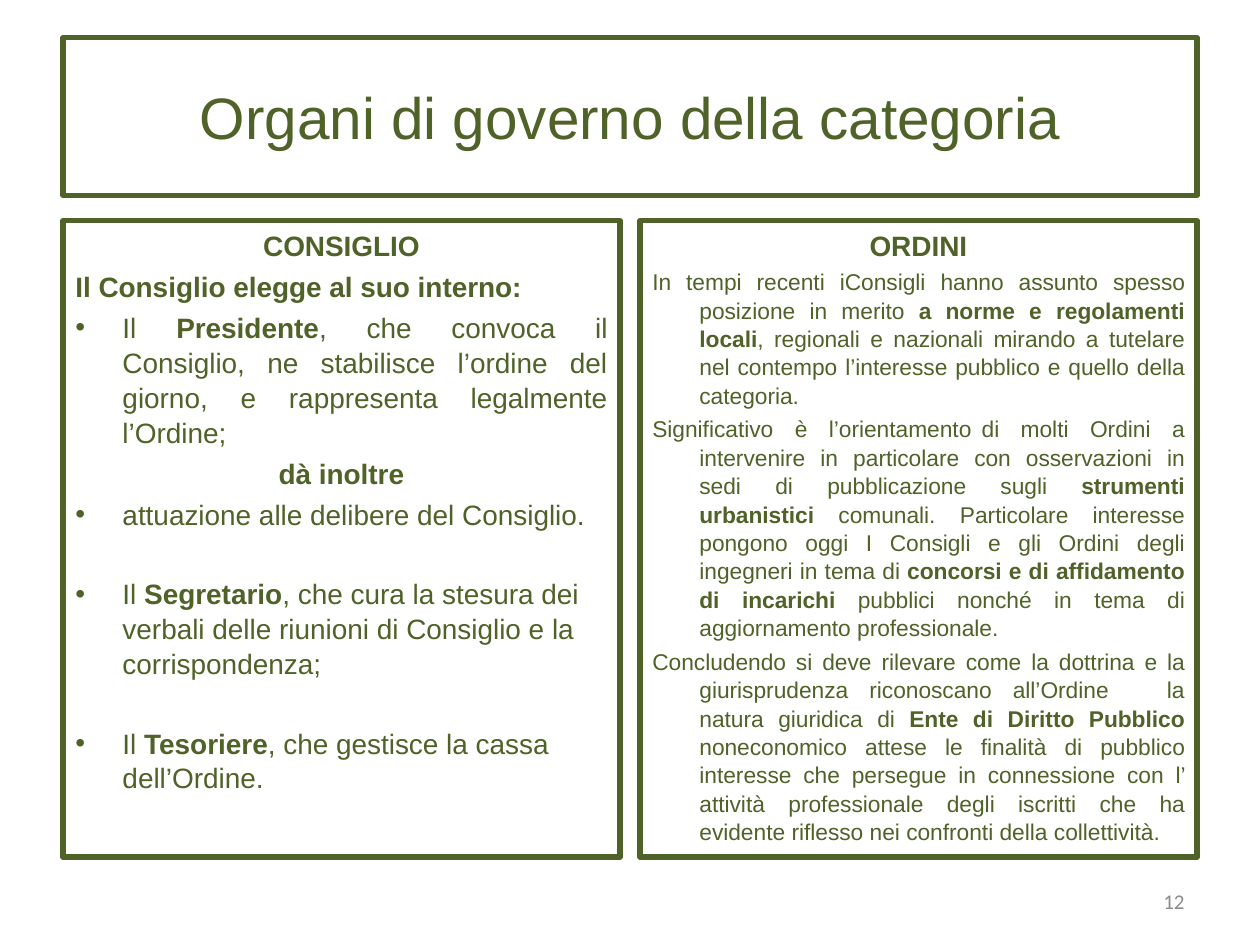
from dataclasses import dataclass

from lxml import etree
from pptx import Presentation
from pptx.dml.color import RGBColor
from pptx.enum import shapes, text
from pptx.oxml import ns
from pptx.util import Cm, Pt

GREEN = RGBColor(0x4F, 0x62, 0x28)
GREY = RGBColor(0x8B, 0x8B, 0x8B)
LEFT, CENTER = text.PP_ALIGN.LEFT, text.PP_ALIGN.CENTER
RIGHT, JUSTIFY = text.PP_ALIGN.RIGHT, text.PP_ALIGN.JUSTIFY

MARGIN, CONTENT_WIDTH = Cm(1.27), Cm(22.86)
COLUMN_TOP, COLUMN_WIDTH, COLUMN_HEIGHT = Cm(4.45), Cm(11.23), Cm(12.83)
HANGING = Cm(0.95)
SECTION_GAP = 25.5


@dataclass
class Entry:
    """A paragraph; asterisks enclose its bold words."""
    wording: str
    align: text.PP_ALIGN = LEFT
    bullet: bool = False
    size: float = 16
    before: float = 3.5


def body(wording: str) -> Entry:
    return Entry(wording, JUSTIFY, size=13, before=2.85)


COUNCIL = [
    Entry("*CONSIGLIO*", CENTER),
    Entry("*Il Consiglio elegge al suo interno:*"),
    Entry("Il *Presidente*, che convoca il Consiglio, ne stabilisce l’ordine del "
          "giorno, e rappresenta legalmente l’Ordine;", JUSTIFY, bullet=True),
    Entry("*dà inoltre*", CENTER),
    Entry("attuazione alle delibere del Consiglio.", bullet=True),
    Entry("Il *Segretario*, che cura la stesura dei verbali delle riunioni di "
          "Consiglio e la corrispondenza;", bullet=True, before=SECTION_GAP),
    Entry("Il *Tesoriere*, che gestisce la cassa dell’Ordine.",
          bullet=True, before=SECTION_GAP),
]
ORDERS = [
    Entry("*ORDINI*", CENTER),
    body("In tempi recenti iConsigli hanno assunto spesso posizione in merito "
         "*a norme e regolamenti locali*, regionali e nazionali mirando a tutelare "
         "nel contempo l’interesse pubblico e quello della categoria. "),
    body("Significativo è l’orientamento\tdi molti Ordini a intervenire in "
         "particolare con osservazioni in sedi di pubblicazione sugli *strumenti "
         "urbanistici *comunali. Particolare interesse pongono oggi I Consigli e "
         "gli Ordini degli ingegneri in tema di *concorsi e di affidamento di "
         "incarichi *pubblici nonché in tema di aggiornamento professionale."),
    body("Concludendo si deve rilevare come la dottrina e la giurisprudenza "
         "riconoscano all’Ordine\tla natura giuridica di *Ente di Diritto Pubblico "
         "*noneconomico attese le finalità di pubblico interesse che persegue in "
         "connessione con l’ attività professionale degli iscritti che ha evidente "
         "riflesso nei confronti della collettività."),
]


def style_font(font, size: float, color: RGBColor = GREEN, name: str = "Arial") -> None:
    font.name, font.size = name, Pt(size)
    font.color.rgb = color


def frame_outline(shape) -> None:
    shape.fill.background()
    shape.line.color.rgb = GREEN
    shape.line.width = Pt(3)


def add_bullet(properties) -> None:
    color = etree.SubElement(properties, ns.qn("a:buClr"))
    etree.SubElement(color, ns.qn("a:srgbClr"), val=str(GREEN))
    etree.SubElement(properties, ns.qn("a:buFont"), typeface="Arial")
    etree.SubElement(properties, ns.qn("a:buChar"), char="•")


def write_entry(paragraph, entry: Entry) -> None:
    paragraph.alignment = entry.align
    paragraph.line_spacing = 1.04
    paragraph.space_before = Pt(entry.before)
    properties = paragraph._p.get_or_add_pPr()
    properties.set("marL", str(HANGING))
    properties.set("indent", str(-HANGING))
    if entry.bullet:
        add_bullet(properties)
    for index, words in enumerate(entry.wording.split("*")):
        if words:
            run = paragraph.add_run()
            run.text = words
            style_font(run.font, entry.size)
            run.font.bold = index % 2 == 1


def add_column(slide, left: int, entries: list[Entry]) -> None:
    column = slide.shapes.add_shape(shapes.MSO_SHAPE.RECTANGLE, left, COLUMN_TOP,
                                    COLUMN_WIDTH, COLUMN_HEIGHT)
    column.shadow.inherit = False
    frame_outline(column)
    frame = column.text_frame
    frame.word_wrap = True
    frame.vertical_anchor = text.MSO_ANCHOR.TOP
    for index, entry in enumerate(entries):
        write_entry(frame.add_paragraph() if index else frame.paragraphs[0], entry)


def main() -> None:
    deck = Presentation()
    deck.slide_width, deck.slide_height = Cm(25.4), Cm(19.05)
    slide = deck.slides.add_slide(deck.slide_layouts[5])

    # Title
    title = slide.shapes.title
    title.left, title.top = MARGIN, Cm(0.76)
    title.width, title.height = CONTENT_WIDTH, Cm(3.18)
    frame_outline(title)
    title.text_frame.text = "Organi di governo della categoria"
    title.text_frame.auto_size = text.MSO_AUTO_SIZE.NONE
    title.text_frame.vertical_anchor = text.MSO_ANCHOR.MIDDLE
    heading = title.text_frame.paragraphs[0]
    heading.alignment = CENTER
    style_font(heading.runs[0].font, 33.4)

    # Two columns, flush with the title's edges
    add_column(slide, MARGIN, COUNCIL)
    add_column(slide, MARGIN + CONTENT_WIDTH - COLUMN_WIDTH, ORDERS)

    # Page number
    number_width = Cm(5.92)
    number = slide.shapes.add_textbox(MARGIN + CONTENT_WIDTH - number_width, Cm(17.65),
                                      number_width, Cm(1.02)).text_frame
    number.word_wrap = True
    number.vertical_anchor = text.MSO_ANCHOR.MIDDLE
    number.text = "12"
    number.paragraphs[0].alignment = RIGHT
    style_font(number.paragraphs[0].runs[0].font, 12, GREY, "Calibri")

    deck.save("out.pptx")


if __name__ == "__main__":
    main()
